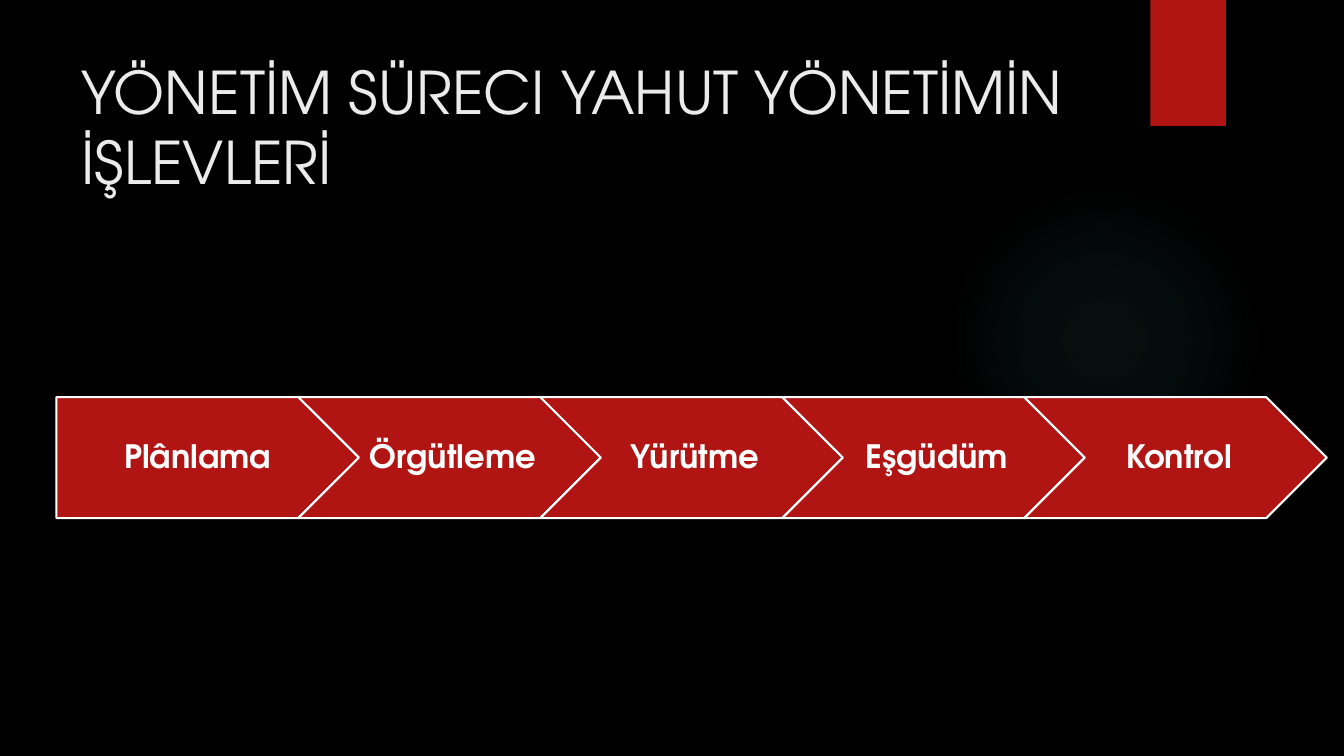
import pptx
import pptx.util
import pptx.dml.color
import pptx.enum.shapes
import pptx.enum.text
import pptx.oxml
import pptx.oxml.ns

Inches = pptx.util.Inches
Pt = pptx.util.Pt
RGBColor = pptx.dml.color.RGBColor
KIND = pptx.enum.shapes.MSO_SHAPE
ANCHOR = pptx.enum.text.MSO_ANCHOR
ALIGN = pptx.enum.text.PP_ALIGN

BLACK = RGBColor(0x00, 0x00, 0x00)
RED = RGBColor(0xB0, 0x15, 0x13)
WHITE = RGBColor(0xFF, 0xFF, 0xFF)
PALE = RGBColor(0xEB, 0xEB, 0xEB)
TEAL = RGBColor(0x50, 0xB9, 0xC1)
FONT = "TeX Gyre Adventor"


def add_shape(kind, left, top, width, height):
    shape = slide.shapes.add_shape(
        kind, Inches(left), Inches(top), Inches(width), Inches(height))
    shape.shadow.inherit = False
    shape.fill.solid()
    shape.fill.fore_color.rgb = RED
    shape.line.fill.background()
    return shape


def add_run(para, text, size, color, bold):
    run = para.add_run()
    run.text = text
    run.font.name = FONT
    run.font.size = Pt(size)
    run.font.color.rgb = color
    run.font.bold = bold


deck = pptx.Presentation()
deck.slide_width = Inches(13.33)
deck.slide_height = Inches(7.5)
slide = deck.slides.add_slide(deck.slide_layouts[5])
slide.background.fill.solid()
slide.background.fill.fore_color.rgb = BLACK

glow = add_shape(KIND.OVAL, 9.41, 1.83, 3.08, 3.08)
stops = "".join(
    f'<a:gs pos="{pos * 1000}"><a:srgbClr val="{TEAL}">'
    f'<a:alpha val="{alpha * 1000}"/></a:srgbClr></a:gs>'
    for pos, alpha in [(0, 7), (36, 6), (69, 0)])
grad = pptx.oxml.parse_xml(
    f'<a:gradFill {pptx.oxml.ns.nsdecls("a")} rotWithShape="1">'
    f'<a:gsLst>{stops}</a:gsLst><a:path path="circle">'
    '<a:fillToRect l="50000" t="50000" r="50000" b="50000"/>'
    '</a:path></a:gradFill>')
props = glow.element.spPr
props.replace(props.find(pptx.oxml.ns.qn("a:solidFill")), grad)

add_shape(KIND.RECTANGLE, 11.41, 0, 0.75, 1.25)

title = slide.shapes.title
title.left, title.top = Inches(0.71), Inches(0.5)
title.width, title.height = Inches(10.29), Inches(1.53)
frame = title.text_frame
frame.word_wrap = True
frame.auto_size = pptx.enum.text.MSO_AUTO_SIZE.NONE
frame.vertical_anchor = ANCHOR.TOP
para = frame.paragraphs[0]
para.alignment = ALIGN.LEFT
add_run(para, "YÖNETİM SÜRECI YAHUT YÖNETİMİN İŞLEVLERİ", 42, PALE, False)

steps = ["Plânlama", "Örgütleme", "Yürütme", "Eşgüdüm", "Kontrol"]
for i, step in enumerate(steps):
    kind = KIND.CHEVRON if i else KIND.PENTAGON
    arrow = add_shape(kind, 0.56 + 2.4 * i, 3.94, 3, 1.2)
    arrow.line.color.rgb = WHITE
    arrow.line.width = Pt(1.5)
    frame = arrow.text_frame
    frame.word_wrap = False
    frame.vertical_anchor = ANCHOR.MIDDLE
    frame.margin_left = Inches(0.1 if i else 0.13)
    frame.margin_right = Inches(0.03)
    frame.margin_top = frame.margin_bottom = Inches(0.07)
    para = frame.paragraphs[0]
    para.alignment = ALIGN.CENTER
    para.line_spacing = 0.9
    add_run(para, step, 23, WHITE, True)

deck.save("out.pptx")
